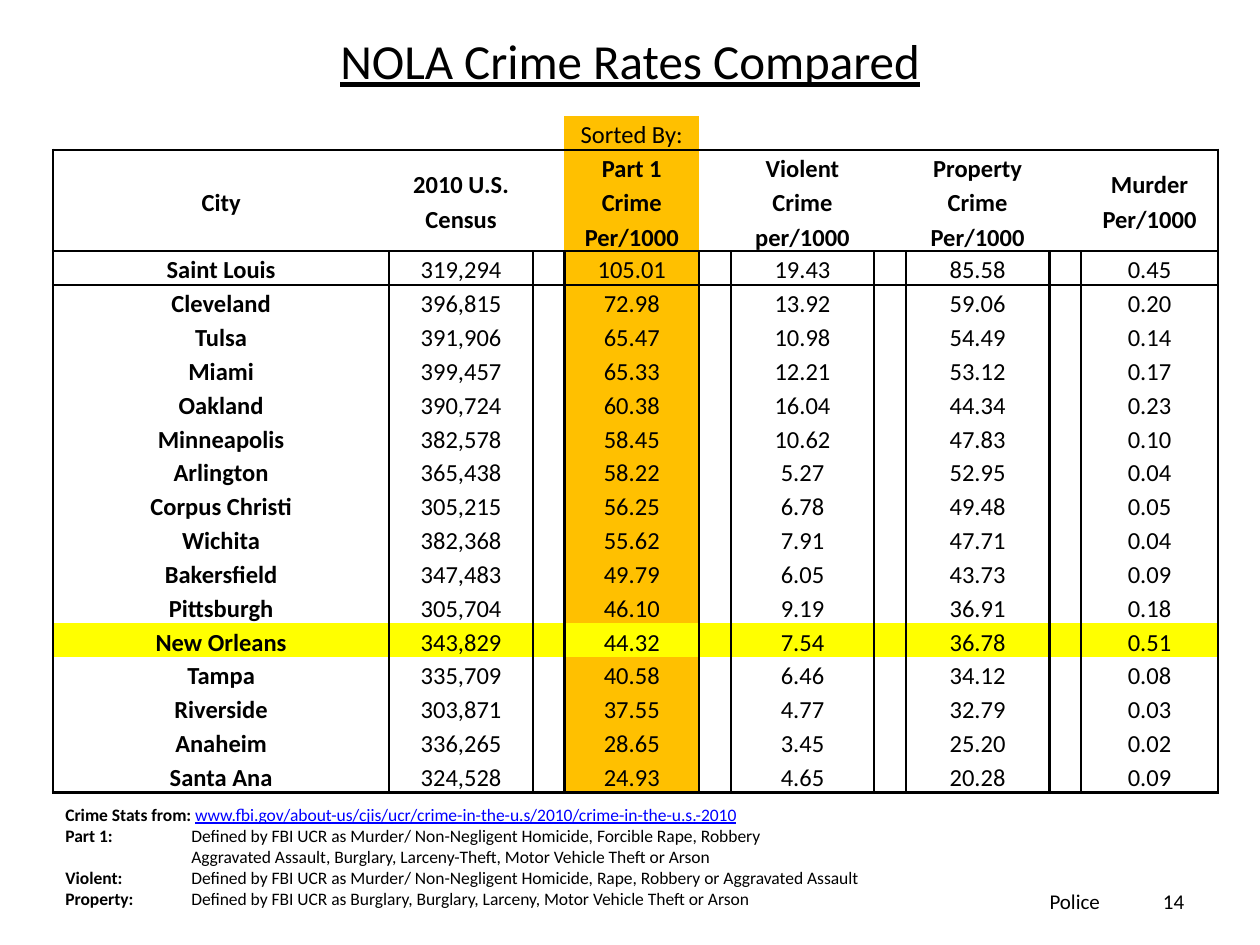
from dataclasses import dataclass

from lxml import etree
from pptx import Presentation
from pptx.dml.color import RGBColor
from pptx.enum import text
from pptx.oxml import ns
from pptx.util import Inches, Pt

TITLE = "NOLA Crime Rates Compared"
FOOTER = "Police\t14"
SORT_LABEL = "Sorted By:"
HEADERS = ["City", "2010 U.S.\nCensus", "Part 1 Crime\nPer/1000", "Violent Crime\nper/1000",
           "Property Crime\nPer/1000", "Murder\nPer/1000"]
CITIES = [
    ("Saint Louis", "319,294", "105.01", "19.43", "85.58", "0.45"),
    ("Cleveland", "396,815", "72.98", "13.92", "59.06", "0.20"),
    ("Tulsa", "391,906", "65.47", "10.98", "54.49", "0.14"),
    ("Miami", "399,457", "65.33", "12.21", "53.12", "0.17"),
    ("Oakland", "390,724", "60.38", "16.04", "44.34", "0.23"),
    ("Minneapolis", "382,578", "58.45", "10.62", "47.83", "0.10"),
    ("Arlington", "365,438", "58.22", "5.27", "52.95", "0.04"),
    ("Corpus Christi", "305,215", "56.25", "6.78", "49.48", "0.05"),
    ("Wichita", "382,368", "55.62", "7.91", "47.71", "0.04"),
    ("Bakersfield", "347,483", "49.79", "6.05", "43.73", "0.09"),
    ("Pittsburgh", "305,704", "46.10", "9.19", "36.91", "0.18"),
    ("New Orleans", "343,829", "44.32", "7.54", "36.78", "0.51"),
    ("Tampa", "335,709", "40.58", "6.46", "34.12", "0.08"),
    ("Riverside", "303,871", "37.55", "4.77", "32.79", "0.03"),
    ("Anaheim", "336,265", "28.65", "3.45", "25.20", "0.02"),
    ("Santa Ana", "324,528", "24.93", "4.65", "20.28", "0.09"),
]
SOURCE_LABEL = "Crime Stats from: "
SOURCE_ADDRESS = "www.fbi.gov/about-us/cjis/ucr/crime-in-the-u.s/2010/crime-in-the-u.s.-2010"
DEFINITIONS = [
    ("Part 1:", "Defined by FBI UCR as Murder/ Non-Negligent Homicide, Forcible Rape, Robbery"),
    ("", "Aggravated Assault, Burglary, Larceny-Theft, Motor Vehicle Theft or Arson"),
    ("Violent:", "Defined by FBI UCR as Murder/ Non-Negligent Homicide, Rape, Robbery "
                 "or Aggravated Assault"),
    ("Property:", "Defined by FBI UCR as Burglary, Burglary, Larceny, Motor Vehicle Theft or Arson"),
]
HIGHLIGHT_CITY = "New Orleans"


@dataclass(frozen=True)
class Theme:
    font: str = "Calibri"
    ink: str = "000000"
    link: str = "0000FF"
    sort_fill: str = "FFC000"
    city_fill: str = "FFFF00"
    title_size: int = 28
    table_size: int = 14
    footer_size: int = 12
    note_size: int = 10
    border: float = 1.5


THEME = Theme()
GAP = 0.25
COLUMN_WIDTHS = [2.67, 1.14, GAP, 1.07, GAP, 1.14, GAP, 1.14, GAP, 1.09]
DATA_COLUMNS = [i for i, width in enumerate(COLUMN_WIDTHS) if width != GAP]
SORT_COLUMN = 3
ROW_HEIGHT, HEADER_HEIGHT = 0.26, 0.79
PLAIN_TABLE_STYLE = "{2D5ABB26-0587-4C30-8999-92F81FD0307C}"


def add_span(para, words, *, size, bold=False, underline=False, color=THEME.ink):
    span = para.add_run()
    span.text = words
    font = span.font
    font.name, font.size, font.bold, font.underline = THEME.font, Pt(size), bold, underline
    font.color.rgb = RGBColor.from_string(color)


def add_tab_stop(para, position):
    stops = etree.SubElement(para._p.get_or_add_pPr(), ns.qn("a:tabLst"))
    etree.SubElement(stops, ns.qn("a:tab"), pos=str(Inches(position)), algn="l")


def add_text_box(page, left, top, width, height):
    box = page.shapes.add_textbox(Inches(left), Inches(top), Inches(width), Inches(height))
    box.text_frame.word_wrap = True
    return box.text_frame


def draw_borders(cell, sides):
    for side in sides:
        line = etree.SubElement(cell._tc.get_or_add_tcPr(), ns.qn(f"a:ln{side}"),
                                w=str(Pt(THEME.border)))
        fill = etree.SubElement(line, ns.qn("a:solidFill"))
        etree.SubElement(fill, ns.qn("a:srgbClr"), val=THEME.ink)


def border_sides(row, column, last_row, last_column):
    """Sides in the order the file format wants: left, right, top, bottom."""
    body = row > 1
    return [side for side, drawn in (
        ("L", body or (row == 1 and column == 0)),
        ("R", body or (row == 1 and column == last_column)),
        ("T", row in (1, 2)),
        ("B", row in (0, 1, last_row)),
    ) if drawn]


def cell_fill(row_words, column):
    if row_words[0] == HIGHLIGHT_CITY:
        return THEME.city_fill
    return THEME.sort_fill if column == SORT_COLUMN else None


def write_cell(cell, words, bold):
    cell.vertical_anchor = text.MSO_ANCHOR.MIDDLE
    cell.margin_left = cell.margin_right = Inches(0.05)
    cell.margin_top = cell.margin_bottom = 0
    frame = cell.text_frame
    for i, line in enumerate(words.split("\n")):
        para = frame.add_paragraph() if i else frame.paragraphs[0]
        para.alignment, para.line_spacing = text.PP_ALIGN.CENTER, 1.15
        if line:
            add_span(para, line, size=THEME.table_size, bold=bold)
        else:
            # An empty cell needs its own type size, or it stretches the row.
            etree.SubElement(para._p, ns.qn("a:endParaRPr"), sz=str(THEME.table_size * 100))


def add_crime_table(page):
    rows = [["", "", SORT_LABEL, "", "", ""], HEADERS, *CITIES]
    heights = [HEADER_HEIGHT if row is HEADERS else ROW_HEIGHT for row in rows]
    table = page.shapes.add_table(
        len(rows), len(COLUMN_WIDTHS), Inches(0.42), Inches(0.92),
        Inches(sum(COLUMN_WIDTHS)), Inches(sum(heights))).table
    table.first_row = table.horz_banding = False
    table._tbl.tblPr.find(ns.qn("a:tableStyleId")).text = PLAIN_TABLE_STYLE
    for column, width in zip(table.columns, COLUMN_WIDTHS):
        column.width = Inches(width)
    for r, (row, height) in enumerate(zip(rows, heights)):
        table.rows[r].height = Inches(height)
        words_at = dict(zip(DATA_COLUMNS, row))
        for c in range(len(COLUMN_WIDTHS)):
            cell = table.cell(r, c)
            write_cell(cell, words_at.get(c, ""), bold=r == 1 or (r > 1 and c == 0))
            draw_borders(cell, border_sides(r, c, len(rows) - 1, len(COLUMN_WIDTHS) - 1))
            color = cell_fill(row, c)
            if color:
                cell.fill.solid()
                cell.fill.fore_color.rgb = RGBColor.from_string(color)
            else:
                cell.fill.background()


def add_title(page):
    title = page.shapes.title
    title.left, title.top, title.width, title.height = map(Inches, (0.5, 0.25, 9, 0.45))
    title.text_frame.vertical_anchor = text.MSO_ANCHOR.MIDDLE
    para = title.text_frame.paragraphs[0]
    para.alignment = text.PP_ALIGN.CENTER
    add_span(para, TITLE, size=THEME.title_size, underline=True)


def add_footer(page):
    frame = add_text_box(page, 7.17, 6.95, 2.33, 0.4)
    frame.margin_left = Inches(1.16)
    frame.vertical_anchor = text.MSO_ANCHOR.MIDDLE
    add_tab_stop(frame.paragraphs[0], 0.9)
    add_span(frame.paragraphs[0], FOOTER, size=THEME.footer_size)


def add_notes_on_sources(page):
    frame = add_text_box(page, 0.42, 6.33, 9.25, 0.94)
    para = frame.paragraphs[0]
    add_span(para, SOURCE_LABEL, size=THEME.note_size, bold=True)
    add_span(para, SOURCE_ADDRESS, size=THEME.note_size, underline=True, color=THEME.link)
    for term, meaning in DEFINITIONS:
        para = frame.add_paragraph()
        add_tab_stop(para, 1)
        if term:
            add_span(para, term, size=THEME.note_size, bold=True)
        add_span(para, "\t" + meaning, size=THEME.note_size)


def main():
    deck = Presentation()
    deck.slide_width, deck.slide_height = Inches(10), Inches(7.5)
    page = deck.slides.add_slide(deck.slide_layouts[5])
    add_title(page)
    add_footer(page)
    add_crime_table(page)
    add_notes_on_sources(page)
    deck.save("out.pptx")


if __name__ == "__main__":
    main()
